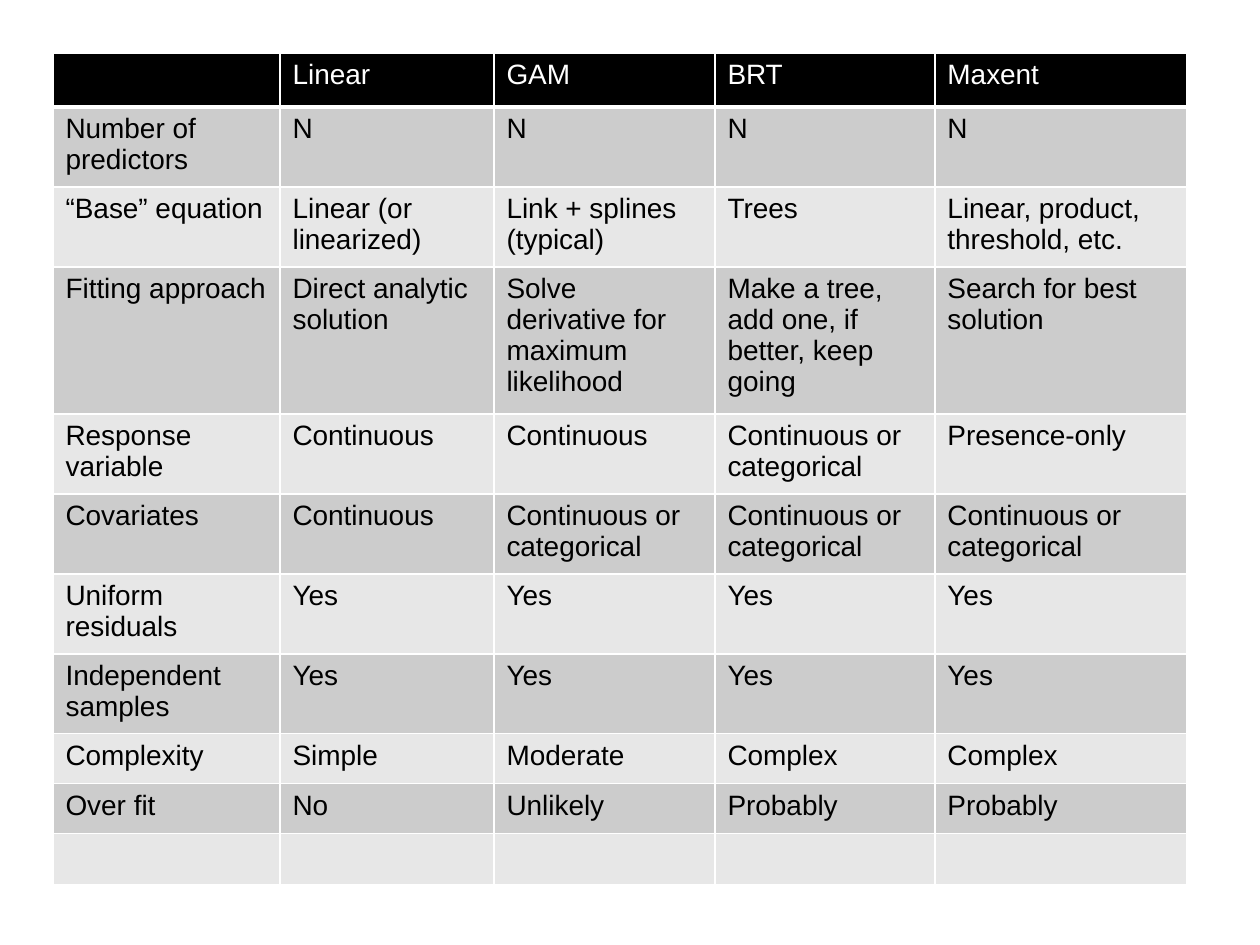
from pptx import Presentation
from pptx.dml.color import RGBColor
from pptx.oxml import parse_xml
from pptx.oxml.ns import nsdecls
from pptx.util import Emu, Pt

PX_PER_INCH = 126
BLACK = RGBColor(0x00, 0x00, 0x00)
WHITE = RGBColor(0xFF, 0xFF, 0xFF)
DARK_BAND = RGBColor(0xCC, 0xCC, 0xCC)
LIGHT_BAND = RGBColor(0xE7, 0xE7, 0xE7)

COL_WIDTHS = [227, 214, 221, 220, 252]
ROW_HEIGHTS = [54, 80, 80, 147, 80, 80, 80, 80, 50, 50, 50]
MODELS = [
    ["", "Linear", "GAM", "BRT", "Maxent"],
    ["Number of predictors"] + ["N"] * 4,
    ["“Base” equation", "Linear (or linearized)", "Link + splines (typical)",
     "Trees", "Linear, product, threshold, etc."],
    ["Fitting approach", "Direct analytic solution",
     "Solve derivative for maximum likelihood",
     "Make a tree, add one, if better, keep going",
     "Search for best solution"],
    ["Response variable", "Continuous", "Continuous",
     "Continuous or categorical", "Presence-only"],
    ["Covariates", "Continuous"] + ["Continuous or categorical"] * 3,
    ["Uniform residuals"] + ["Yes"] * 4,
    ["Independent samples"] + ["Yes"] * 4,
    ["Complexity", "Simple", "Moderate", "Complex", "Complex"],
    ["Over fit", "No", "Unlikely", "Probably", "Probably"],
    [""] * 5,
]


def px(n):
    return Emu(round(n * 914400 / PX_PER_INCH))


class SlideBuilder:
    font = "Arial"
    size = Pt(16)

    def __init__(self, prs):
        self.s = prs.slides.add_slide(prs.slide_layouts[6])

    def table(self, x, y, widths, heights, rows):
        frame = self.s.shapes.add_table(
            len(rows), len(widths), px(x), px(y), px(sum(widths)), px(sum(heights)))
        table = frame.table
        table.horz_banding = False
        for column, width in zip(table.columns, widths):
            column.width = px(width)
        for row, height in zip(table.rows, heights):
            row.height = px(height)
        for i, texts in enumerate(rows):
            header = i == 0
            band = DARK_BAND if i % 2 else LIGHT_BAND
            for cell, text in zip(table.rows[i].cells, texts):
                self.cell(cell, text, BLACK if header else band,
                          WHITE if header else BLACK)
                self.borders(cell, bottom=3 if header else 1)

    def cell(self, cell, text, fill, color):
        cell.fill.solid()
        cell.fill.fore_color.rgb = fill
        if not text:
            return
        cell.text_frame.text = text
        r = cell.text_frame.paragraphs[0].runs[0]
        r.font.name = self.font
        r.font.size = self.size
        r.font.bold = False
        r.font.color.rgb = color

    def borders(self, cell, bottom):
        tc_pr = cell._tc.get_or_add_tcPr()
        for i, (side, width) in enumerate(zip("LRTB", (1, 1, 1, bottom))):
            tc_pr.insert(i, parse_xml(
                f'<a:ln{side} {nsdecls("a")} w="{Pt(width)}"><a:solidFill>'
                f'<a:srgbClr val="{WHITE}"/></a:solidFill></a:ln{side}>'))


def main():
    prs = Presentation()
    prs.slide_width, prs.slide_height = px(1260), px(945)
    SlideBuilder(prs).table(53, 53, COL_WIDTHS, ROW_HEIGHTS, MODELS)
    prs.save("out.pptx")


if __name__ == "__main__":
    main()
